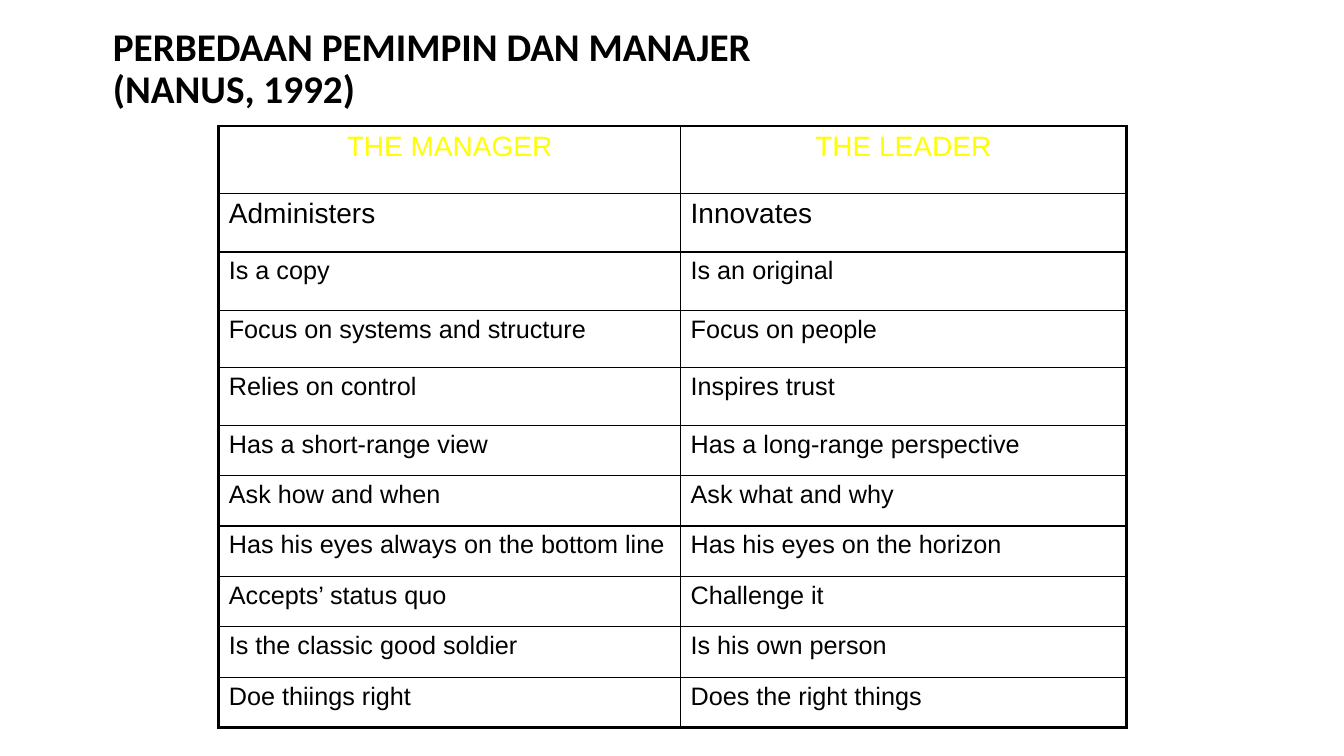
from dataclasses import dataclass

from lxml import etree
from pptx import Presentation
from pptx import util as u
from pptx.dml.color import RGBColor
from pptx.enum import text
from pptx.oxml.ns import qn

EMU_PER_PX = 9144
COLORS = {"ink": "000000", "header": "FFFF00"}
THIN, THICK = 1, 2.25
COLUMN_WIDTHS = [458, 442]


@dataclass
class Row:
    manager: str
    leader: str
    height: int = 50
    size: int = 18
    color: str = "ink"
    align: text.PP_ALIGN = text.PP_ALIGN.LEFT


ROWS = [
    Row("THE MANAGER", "THE LEADER", 67, 20, "header", text.PP_ALIGN.CENTER),
    Row("Administers", "Innovates", 58, 20),
    Row("Is a copy", "Is an original", 58),
    Row("Focus on systems and structure", "Focus on people", 57),
    Row("Relies on control", "Inspires trust", 57),
    Row("Has a short-range view", "Has a long-range perspective"),
    Row("Ask how and when", "Ask what and why"),
    Row("Has his eyes always on the bottom line", "Has his eyes on the horizon"),
    Row("Accepts’ status quo", "Challenge it"),
    Row("Is the classic good soldier", "Is his own person"),
    Row("Doe thiings right", "Does the right things"),
]


def px(length: int) -> u.Emu:
    return u.Emu(length * EMU_PER_PX)


def style_paragraph(paragraph, font_name: str, size: int, color: str,
                    align: text.PP_ALIGN, bold: bool = False) -> None:
    paragraph.alignment = align
    for run in paragraph.runs:
        run.font.name = font_name
        run.font.size = u.Pt(size)
        run.font.bold = bold
        run.font.color.rgb = RGBColor.from_string(COLORS[color])


def set_borders(cell, widths: dict[str, float]) -> None:
    properties = cell._tc.get_or_add_tcPr()
    for side in ("L", "R", "T", "B"):
        line = etree.SubElement(properties, qn(f"a:ln{side}"), w=str(u.Pt(widths[side])))
        fill = etree.SubElement(line, qn("a:solidFill"))
        etree.SubElement(fill, qn("a:srgbClr"), val=COLORS["ink"])


def add_title(slide) -> None:
    title = slide.shapes.title
    title.left, title.top, title.width, title.height = map(px, (102, 30, 1015, 78))
    frame = title.text_frame
    frame.text = "PERBEDAAN PEMIMPIN DAN MANAJER\v(NANUS, 1992)"
    frame.auto_size = text.MSO_AUTO_SIZE.NONE
    frame.vertical_anchor = text.MSO_ANCHOR.MIDDLE
    paragraph = frame.paragraphs[0]
    paragraph.line_spacing = 0.9
    style_paragraph(paragraph, "Calibri", 28, "ink", text.PP_ALIGN.LEFT, bold=True)


def add_comparison(slide) -> None:
    height = sum(row.height for row in ROWS)
    table = slide.shapes.add_table(len(ROWS), len(COLUMN_WIDTHS), px(217), px(125),
                                   px(sum(COLUMN_WIDTHS)), px(height)).table
    table.first_row = table.horz_banding = False
    for column, width in zip(table.columns, COLUMN_WIDTHS):
        column.width = px(width)
    last_row, last_column = len(ROWS) - 1, len(COLUMN_WIDTHS) - 1
    for i, row in enumerate(ROWS):
        table.rows[i].height = px(row.height)
        for j, wording in enumerate((row.manager, row.leader)):
            cell = table.cell(i, j)
            cell.text_frame.text = wording
            style_paragraph(cell.text_frame.paragraphs[0], "Arial", row.size,
                            row.color, row.align)
            outer = {"L": j == 0, "R": j == last_column, "T": i == 0, "B": i == last_row}
            set_borders(cell, {side: THICK if edge else THIN
                               for side, edge in outer.items()})
            cell.fill.background()


def main() -> None:
    presentation = Presentation()
    presentation.slide_width, presentation.slide_height = px(1333), px(750)
    slide = presentation.slides.add_slide(presentation.slide_layouts[5])
    add_title(slide)
    add_comparison(slide)
    presentation.save("out.pptx")


if __name__ == "__main__":
    main()
